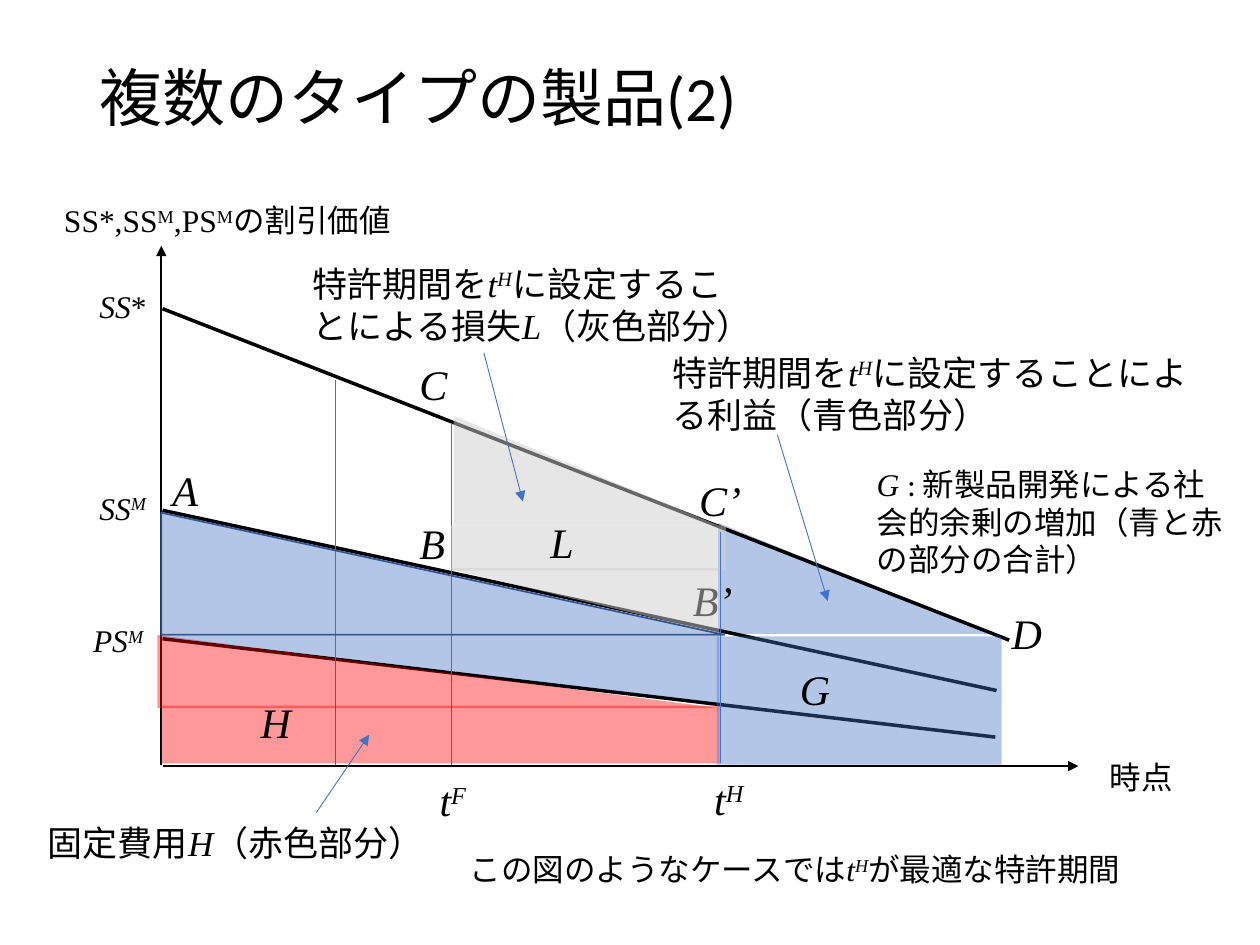
"""Builds the slide on patent length for several product types."""
from dataclasses import dataclass
from lxml.etree import SubElement as Sub
from pptx import Presentation
from pptx.dml.color import RGBColor
from pptx.enum.shapes import MSO_CONNECTOR as Conn, MSO_SHAPE as Kind
from pptx.enum.text import MSO_ANCHOR as Anchor, MSO_AUTO_SIZE as Auto
from pptx.oxml.ns import qn
from pptx.slide import Slide
from pptx.util import Pt

BLACK = RGBColor(0x00, 0x00, 0x00)
BLUE = RGBColor(0x44, 0x72, 0xC4)
NAVY = RGBColor(0x32, 0x54, 0x91)
GRAY = RGBColor(0xD0, 0xCE, 0xCE)
RED = RGBColor(0xFF, 0x00, 0x00)
SANS, SERIF = "Calibri", "Times New Roman"
PLAIN, ROMAN, ITAL = (SANS, False, 0), (SERIF, False, 0), (SERIF, True, 0)
RAISED, SUPER = (SERIF, False, 30), (SERIF, True, 30)
TH = [("t", ITAL), ("H", SUPER)]


@dataclass
class Pen:
    """Draws on one slide in a shared style."""
    slide: Slide
    ink: RGBColor = BLACK

    def text(self, left, top, width, height, size, runs, wrap=True):
        """Adds a text box of styled runs."""
        box = self.slide.shapes.add_textbox(Pt(left), Pt(top), Pt(width), Pt(height))
        frame = box.text_frame
        frame.word_wrap = wrap
        frame.auto_size = Auto.SHAPE_TO_FIT_TEXT
        para = frame.paragraphs[0]
        para.font.size = Pt(size)
        para.font.color.rgb = self.ink
        faces = {style[:2] for _, style in runs}
        if len(faces) == 1:
            para.font.name, para.font.italic = faces.pop()
        for words, (face, slant, rise) in runs:
            run = para.add_run()
            run.text = words
            if faces:
                run.font.name, run.font.italic = face, slant
            if rise:
                run.font._element.set("baseline", str(rise * 1000))
        return frame

    def line(self, start, end, color, weight, arrow=False):
        """Adds a straight line, with an arrowhead at its end on request."""
        ends = [Pt(n) for n in (*start, *end)]
        line = self.slide.shapes.add_connector(Conn.STRAIGHT, *ends)
        line.line.color.rgb = color
        line.line.width = Pt(weight)
        if arrow:
            Sub(line.line._get_or_add_ln(), qn("a:tailEnd"), type="triangle")
        Sub(line._element.spPr, qn("a:effectLst"))

    def area(self, kind, left, top, width, height, color, alpha, edge=None, flip=False):
        """Adds a see-through area."""
        area = self.slide.shapes.add_shape(kind, Pt(left), Pt(top), Pt(width), Pt(height))
        area.shadow.inherit = False
        area.fill.solid()
        area.fill.fore_color.rgb = color
        tint = area._element.spPr.find(qn("a:solidFill"))[0]
        Sub(tint, qn("a:alpha"), val=str(alpha * 1000))
        if edge is None:
            area.line.fill.background()
        else:
            area.line.color.rgb = edge
            area.line.width = Pt(1)
        if flip:
            for side in ("flipH", "flipV"):
                area._element.spPr.xfrm.set(side, "1")


def main():
    """Builds and saves the slide."""
    deck = Presentation()
    deck.slide_width, deck.slide_height = Pt(720), Pt(540)
    pen = Pen(deck.slides.add_slide(deck.slide_layouts[6]))
    box, wedge = Kind.RECTANGLE, Kind.RIGHT_TRIANGLE

    pen.area(wedge, 410.4, 298.8, 157, 63.4, BLUE, 40)
    title = pen.text(49.7, 5.8, 620.6, 104.4, 36, [("複数のタイプの製品(2)", PLAIN)])
    title.auto_size = Auto.NONE
    title.vertical_anchor = Anchor.MIDDLE
    title.paragraphs[0].line_spacing = 0.9

    pen.line((92.9, 437.8), (616.3, 437.8), BLACK, 1, True)
    pen.line((92.2, 437), (92.2, 140.4), BLACK, 1, True)
    for rise, end in ((176.4, (576.7, 365.8)), (291.6, (569.5, 394.6)), (365, (568.8, 421.2))):
        pen.line((92.9, rise), end, BLACK, 2)
    for left, top in ((191.5, 217.4), (257.8, 241.9)):
        pen.line((left, 437.4), (left, top), BLUE, 0.5)

    pen.text(627.1, 429.8, 65.5, 28.8, 18, [("時点", PLAIN)])
    pen.text(29.5, 111.6, 211, 28.8, 18, [
        ("SS*,SS", ROMAN), ("M", RAISED), (",PS", ROMAN), ("M", RAISED), ("の割引価値", PLAIN)])
    pen.text(49.7, 160.6, 42.5, 28.8, 18, [("SS", ITAL), ("*", ROMAN)])
    pen.text(49.7, 275.8, 45.4, 28.8, 18, [("SS", ITAL), ("M", SUPER)])
    pen.text(46.1, 351.4, 49, 28.8, 18, [("PS", ITAL), ("M", SUPER)])

    pen.area(box, 257.8, 300.2, 157, 25.9, GRAY, 50)
    pen.area(wedge, 259.2, 237.6, 151.2, 62.6, GRAY, 50)
    pen.line((411.8, 436.3), (411.8, 303.8), BLUE, 0.5)
    for name, left, top, width in (
            ("A", 91.4, 262.1, 29.5), ("D", 571, 343.4, 32.4), ("C", 232.6, 201.6, 31),
            ("B", 232.6, 292.3, 29.5), ("B’", 388.8, 324.7, 37.4), ("C’", 392.4, 267.8, 38.9)):
        pen.text(left, top, width, 36, 24, [(name, ITAL)], False)
    pen.text(171.4, 146.2, 267.1, 55.4, 20, [
        ("特許期間を", PLAIN), *TH, ("に設定することによる損失", PLAIN),
        ("L", ITAL), ("（灰色部分）", PLAIN)])
    pen.area(wedge, 254.9, 324.7, 156.2, 37.4, GRAY, 50, flip=True)
    pen.text(244.1, 439.2, 41.8, 36, 24, [("t", ITAL), ("F", SUPER)])
    pen.text(401, 438.5, 41.8, 36, 24, TH)

    pen.area(box, 92.2, 403.2, 319, 33.1, RED, 40)
    pen.area(wedge, 90, 362.9, 321.1, 41.8, RED, 40)
    pen.area(box, 409.7, 363.6, 162.7, 73.4, BLUE, 40)
    pen.area(wedge, 92.2, 293, 321.8, 69.8, BLUE, 40, edge=NAVY)
    pen.area(wedge, 90, 363.6, 321.1, 38.2, BLUE, 40, flip=True)

    for start, end in (((180.7, 464.4), (211, 419.8)), ((276.5, 201.6), (298.8, 286.6)),
                       ((444.2, 248.4), (473, 343.4))):
        pen.line(start, end, BLUE, 0.5, True)
    pen.text(20.2, 465.8, 234, 31.7, 20, [
        ("固定費用", PLAIN), ("H", ITAL), ("（赤色部分）", ROMAN)])
    pen.text(377.3, 197.3, 322.6, 55.4, 20, [
        ("特許期間を", PLAIN), *TH, ("に設定することによる利益（青色部分）", PLAIN)])
    pen.text(261.4, 482.4, 438.5, 28.8, 18, [
        ("この図のようなケースでは", PLAIN), *TH, ("が最適な特許期間", PLAIN)])
    for name, left, top, width in (
            ("L", 307.4, 291.6, 34.6), ("G", 450, 375.8, 57.6), ("H", 141.8, 394.6, 43.9)):
        pen.text(left, top, width, 36, 24, [(name, ITAL)])
    pen.text(493.9, 262.1, 213.1, 72.7, 18, [
        ("G ", ITAL), (": 新製品開発による社会的余剰の増加（青と赤の部分の合計）", PLAIN)])
    deck.save("out.pptx")


if __name__ == "__main__":
    main()
